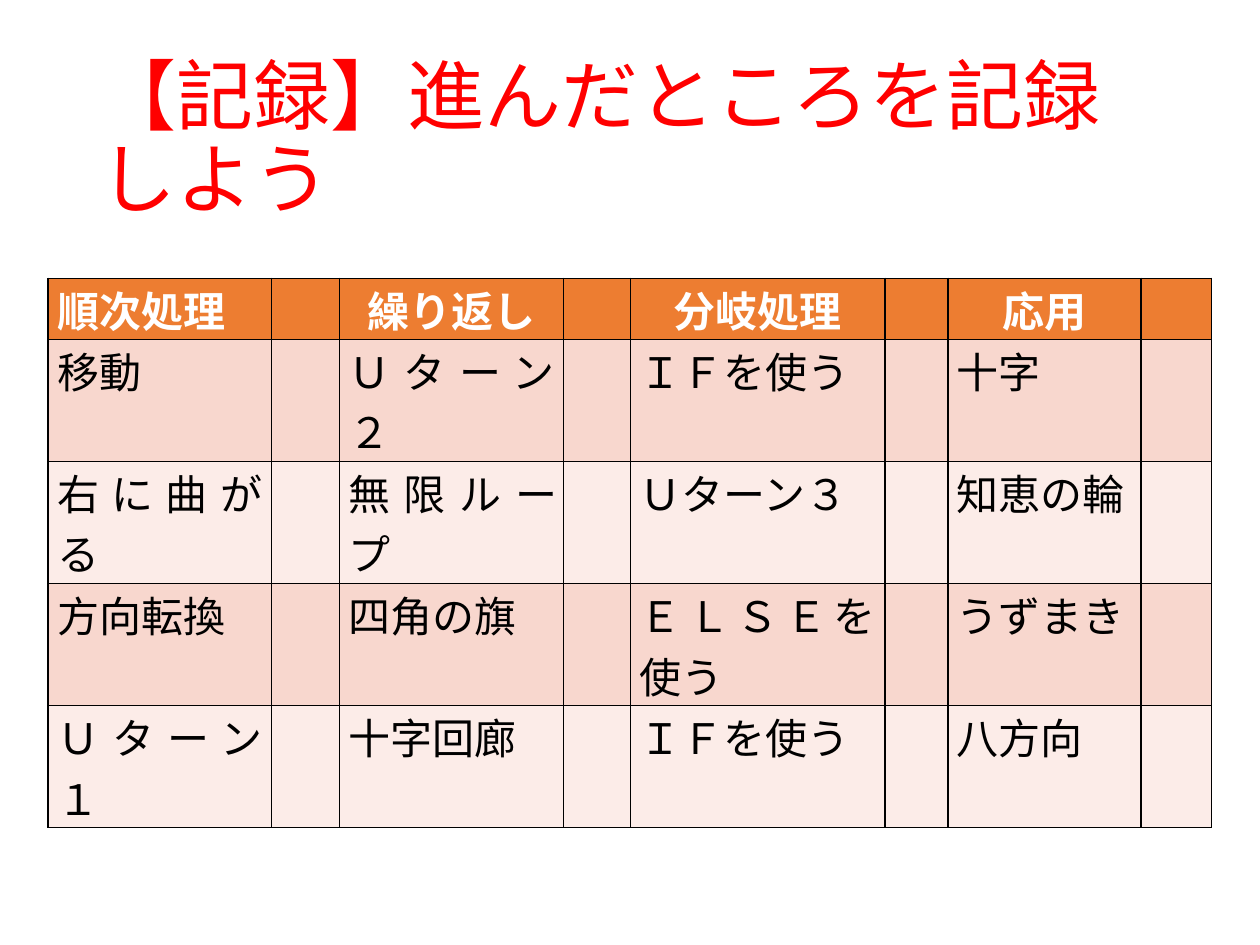
"""Build a slide with a progress table for programming lessons."""
from lxml import etree
from pptx import Presentation
from pptx.dml.color import RGBColor
from pptx.enum.text import MSO_ANCHOR, MSO_AUTO_SIZE, PP_ALIGN
from pptx.oxml.ns import qn
from pptx.util import Cm, Pt

LEFT, MID, JUST = PP_ALIGN.LEFT, PP_ALIGN.CENTER, PP_ALIGN.JUSTIFY
CENTER, NO_FIT = MSO_ANCHOR.MIDDLE, MSO_AUTO_SIZE.NONE
RED = RGBColor(0xFF, 0x00, 0x00)
WHITE = RGBColor(0xFF, 0xFF, 0xFF)
BLACK = RGBColor(0x00, 0x00, 0x00)
ORANGE = RGBColor(0xED, 0x7D, 0x31)
BANDS = (RGBColor(0xFC, 0xEC, 0xE8), RGBColor(0xF8, 0xD7, 0xCE))
FONT = "Calibri"

TITLE = "【記録】進んだところを記録しよう"
ROWS = [
    ("順次処理", "繰り返し", "分岐処理", "応用"),
    ("移動", "Ｕターン２", "ＩＦを使う", "十字"),
    ("右に曲がる", "無限ループ", "Ｕターン３", "知恵の輪"),
    ("方向転換", "四角の旗", "ＥＬＳＥを使う", "うずまき"),
    ("Ｕターン１", "十字回廊", "ＩＦを使う", "八方向"),
]
WIDTHS = (4.5, 1.37, 4.52, 1.35, 5.13, 1.27, 3.89, 1.42)
HEAD, BODY = 1.23, 2.46


def write(para, text, size, color, bold=False):
    run = para.add_run()
    run.text = text
    font = run.font
    font.name, font.size, font.bold = FONT, Pt(size), bold
    font.color.rgb = color


def edge(cell):
    props = cell._tc.get_or_add_tcPr()
    for side in ("lnL", "lnR", "lnT", "lnB"):
        line = etree.SubElement(props, qn(f"a:{side}"), w=str(Pt(1)))
        fill = etree.SubElement(line, qn("a:solidFill"))
        etree.SubElement(fill, qn("a:srgbClr"), val=str(BLACK))


def add_title(slide):
    title = slide.shapes.title
    title.left, title.top = Cm(1.75), Cm(1.01)
    title.width, title.height = Cm(21.9), Cm(3.68)
    frame = title.text_frame
    frame.word_wrap, frame.auto_size = True, NO_FIT
    frame.vertical_anchor = CENTER
    para = frame.paragraphs[0]
    para.alignment, para.line_spacing = LEFT, 0.9
    write(para, TITLE, 44, RED)


def add_record(slide):
    heights = [HEAD] + [BODY] * (len(ROWS) - 1)
    table = slide.shapes.add_table(
        len(ROWS), len(WIDTHS), Cm(0.97), Cm(5.61),
        Cm(sum(WIDTHS)), Cm(sum(heights))).table
    for col, width in zip(table.columns, WIDTHS):
        col.width = Cm(width)
    for i, (row, height) in enumerate(zip(table.rows, heights)):
        row.height = Cm(height)
        head = i == 0
        for j, cell in enumerate(row.cells):
            edge(cell)
            cell.fill.solid()
            cell.fill.fore_color.rgb = ORANGE if head else BANDS[i % 2]
            if j % 2:
                continue
            cell.margin_left = cell.margin_right = Cm(0.18)
            cell.margin_top = cell.margin_bottom = 0
            para = cell.text_frame.paragraphs[0]
            para.alignment = JUST if not head else MID if j else LEFT
            write(para, ROWS[i][j // 2], 24, WHITE if head else BLACK, head)


def main():
    deck = Presentation()
    deck.slide_width, deck.slide_height = Cm(25.4), Cm(19.05)
    slide = deck.slides.add_slide(deck.slide_layouts[5])
    add_title(slide)
    add_record(slide)
    deck.save("out.pptx")


if __name__ == "__main__":
    main()
